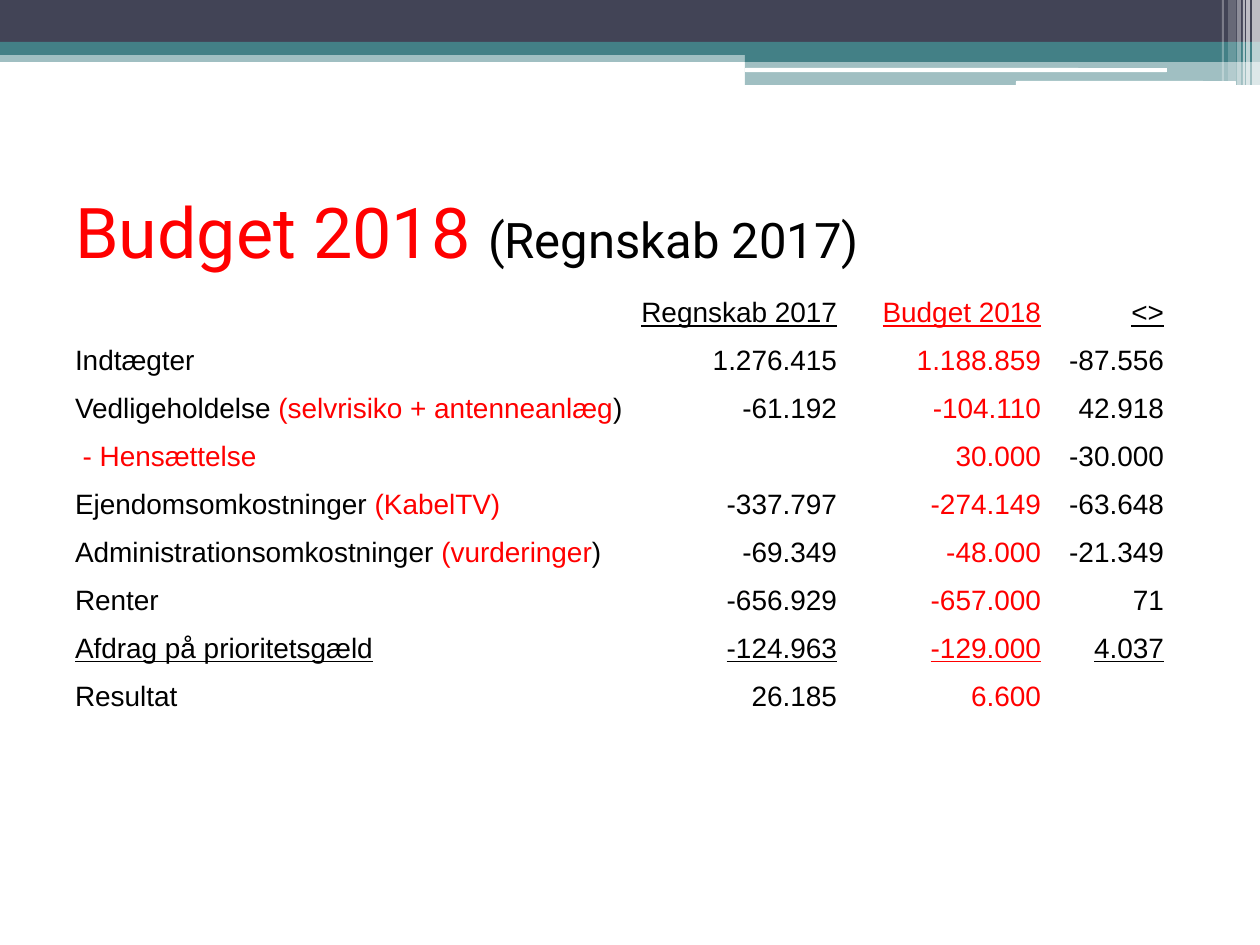
from lxml.etree import SubElement
from pptx import Presentation
from pptx.dml.color import RGBColor
from pptx.enum.shapes import MSO_SHAPE as Kind
from pptx.enum.text import MSO_ANCHOR as Anchor, PP_ALIGN as Align
from pptx.oxml.ns import qn
from pptx.util import Pt

SCALE = 914400 / 126
NAVY, TEAL, WHITE, RED, BLACK = "424456", "438086", "FFFFFF", "FF0000", "000000"
BANDS = [
    (0, 50, 1260, 12, TEAL, 50),
    (0, 0, 1260, 42, NAVY, 100),
    (0, 42, 1260, 13, TEAL, 100),
    (745, 49, 515, 13, TEAL, 100),
    (745, 61, 515, 24, TEAL, 50),
]
PILLS = [(745, 68, 422, 4), (1016, 81, 220, 5)]
STRIPES = [
    (1252, 8, 85, 65), (1246, 4, 85, 65), (1243, 2, 85, 60),
    (1237, 4, 85, 40), (1228, 8, 81, 20), (1222, 2, 81, 30),
]
COLS = [551, 213, 204, 123]
ROWS = [
    ([], "Regnskab 2017", "Budget 2018", "<>"),
    ([("Indtægter", BLACK)], "1.276.415", "1.188.859", "-87.556"),
    ([("Vedligeholdelse ", BLACK), ("(selvrisiko + antenneanlæg", RED), (")", BLACK)],
     "-61.192", "-104.110", "42.918"),
    ([(" - Hensættelse", RED)], "", "30.000", "-30.000"),
    ([("Ejendomsomkostninger ", BLACK), ("(KabelTV)", RED)],
     "-337.797", "-274.149", "-63.648"),
    ([("Administrationsomkostninger ", BLACK), ("(vurderinger", RED), (")", BLACK)],
     "-69.349", "-48.000", "-21.349"),
    ([("Renter", BLACK)], "-656.929", "-657.000", "71"),
    ([("Afdrag på prioritetsgæld", BLACK)], "-124.963", "-129.000", "4.037"),
    ([("Resultat", BLACK)], "26.185", "6.600", ""),
]
LINED = {0, 7}


def px(*nums):
    """Turn pixel lengths into EMU."""
    return [round(n * SCALE) for n in nums]


def tint(hue):
    """Turn a hex string into a colour."""
    return RGBColor.from_string(hue)


def add_bar(slide, box, hue, alpha=100, kind=Kind.RECTANGLE):
    """Draw a plain filled bar with an opacity in percent."""
    bar = slide.shapes.add_shape(kind, *px(*box))
    bar.shadow.inherit = False
    bar.line.fill.background()
    bar.fill.solid()
    bar.fill.fore_color.rgb = tint(hue)
    if alpha < 100:
        node = bar.fill._xPr.find(".//" + qn("a:srgbClr"))
        SubElement(node, qn("a:alpha"), val=str(alpha * 1000))


def add_run(para, text, font, size, hue, lined=False):
    """Append a formatted run to a paragraph."""
    run = para.add_run()
    run.text = text
    run.font.name = font
    run.font.size = Pt(size)
    run.font.color.rgb = tint(hue)
    run.font.underline = lined


def add_title(slide):
    """Write the two-tone heading."""
    frame = slide.shapes.add_textbox(*px(63, 157, 1134, 147)).text_frame
    frame.word_wrap = True
    frame.vertical_anchor = Anchor.MIDDLE
    para = frame.paragraphs[0]
    add_run(para, "Budget 2018 ", "Roboto", 40, RED)
    add_run(para, "(Regnskab 2017)", "Roboto", 28, BLACK)


def fill_cell(cell, runs, align, lined):
    """Set the text and margins of one table cell."""
    cell.fill.background()
    cell.vertical_anchor = Anchor.BOTTOM
    cell.margin_left = cell.margin_right = cell.margin_top = px(1)[0]
    cell.margin_bottom = 0
    para = cell.text_frame.paragraphs[0]
    para.alignment = align
    for text, hue in runs:
        add_run(para, text, "Arial", 16, hue, lined)
    if not runs:
        SubElement(para._p, qn("a:endParaRPr"), sz="1600")


def add_budget(slide):
    """Build the budget table."""
    box = px(74, 294, sum(COLS), 418)
    table = slide.shapes.add_table(len(ROWS), len(COLS), *box).table
    table.first_row = table.horz_banding = False
    for col, wide in zip(table.columns, px(*COLS)):
        col.width = wide
    for r, (label, *sums) in enumerate(ROWS):
        table.rows[r].height = px(48 if r else 34)[0]
        fill_cell(table.cell(r, 0), label, Align.LEFT, r in LINED)
        for c, (text, hue) in enumerate(zip(sums, (BLACK, RED, BLACK)), 1):
            runs = [(text, hue)] if text else []
            fill_cell(table.cell(r, c), runs, Align.RIGHT, r in LINED)


def main():
    """Build and save the slide."""
    deck = Presentation()
    deck.slide_width, deck.slide_height = px(1260, 945)
    slide = deck.slides.add_slide(deck.slide_layouts[6])
    for *box, hue, alpha in BANDS:
        add_bar(slide, box, hue, alpha)
    for box in PILLS:
        add_bar(slide, box, WHITE, kind=Kind.ROUNDED_RECTANGLE)
    for left, wide, high, alpha in STRIPES:
        add_bar(slide, (left, 0, wide, high), WHITE, alpha)
    add_title(slide)
    add_budget(slide)
    deck.save("out.pptx")


if __name__ == "__main__":
    main()
